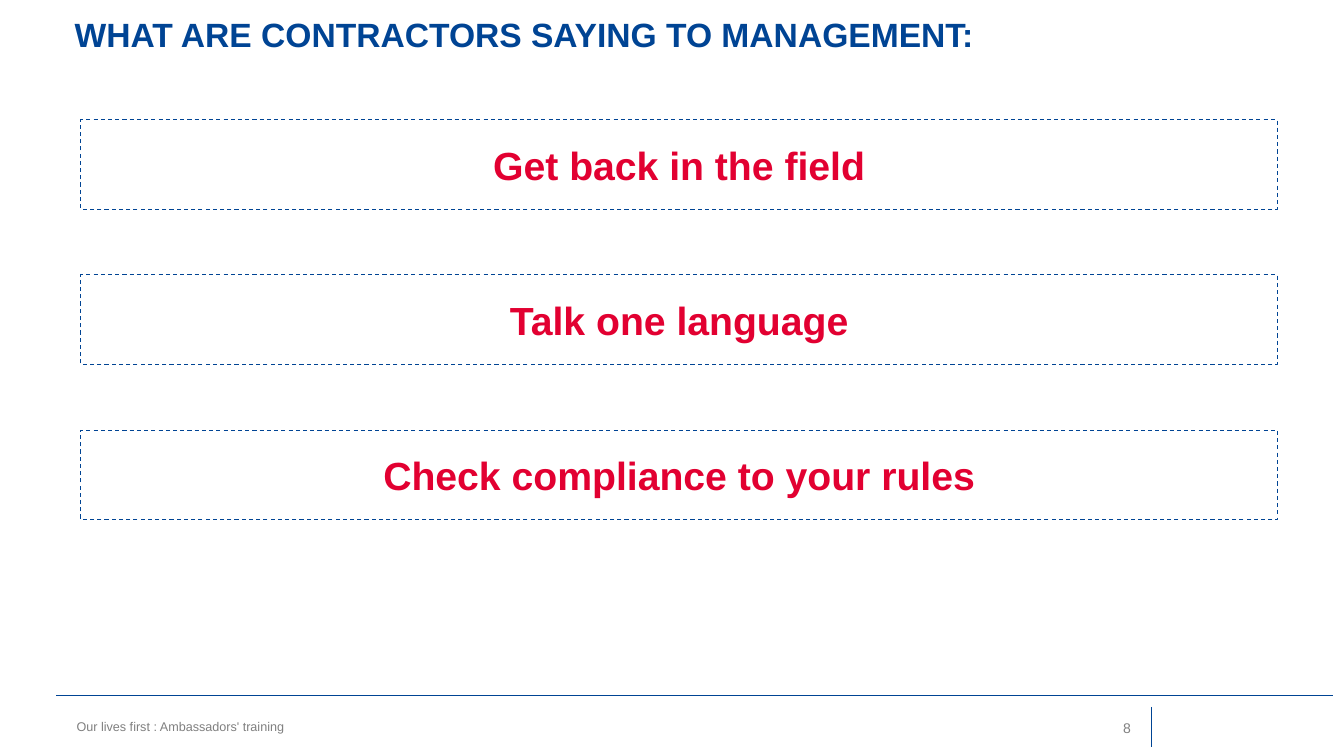
from pptx import Presentation
from pptx.dml.color import RGBColor
from pptx.enum.dml import MSO_LINE
from pptx.enum.shapes import MSO_CONNECTOR, MSO_SHAPE
from pptx.enum.text import MSO_ANCHOR, PP_ALIGN
from pptx.util import Cm, Pt
from lxml import etree

BLUE = RGBColor(0x00, 0x44, 0x94)
RED = RGBColor(0xE2, 0x00, 0x31)
GREY = RGBColor(0x80, 0x80, 0x80)
WHITE = RGBColor(0xFF, 0xFF, 0xFF)
DRAWING_NS = "http://schemas.openxmlformats.org/drawingml/2006/main"

TITLE = "WHAT ARE CONTRACTORS SAYING TO MANAGEMENT:"
MESSAGES = [
    "Get back in the field",
    "Talk one language",
    "Check compliance to your rules",
]
FOOTER = "Our lives first : Ambassadors' training"
PAGE_NUMBER = "8"
FOOTER_RULES = [
    (1.42, 17.53, 33.6, 17.53, 0.75),
    (29.01, 17.81, 29.01, 18.82, 0.5),
]

MESSAGE_LEFT, MESSAGE_TOP = 2.04, 3.02
MESSAGE_WIDTH, MESSAGE_HEIGHT = 30.15, 2.26
MESSAGE_PITCH = 3.91


def write(shape, text, size, color, bold=False, align=PP_ALIGN.LEFT):
    frame = shape.text_frame
    frame.word_wrap = True
    frame.vertical_anchor = MSO_ANCHOR.MIDDLE
    paragraph = frame.paragraphs[0]
    paragraph.text = text
    paragraph.alignment = align
    font = paragraph.font
    font.name, font.size, font.bold = "Arial", Pt(size), bold
    font.color.rgb = color


def add_text(slide, left, top, width, height, *style):
    box = slide.shapes.add_textbox(Cm(left), Cm(top), Cm(width), Cm(height))
    write(box, *style)
    return box


def add_rule(slide, x1, y1, x2, y2, weight):
    rule = slide.shapes.add_connector(
        MSO_CONNECTOR.STRAIGHT, Cm(x1), Cm(y1), Cm(x2), Cm(y2))
    rule.line.color.rgb = BLUE
    rule.line.width = Pt(weight)
    etree.SubElement(rule._element.spPr, f"{{{DRAWING_NS}}}effectLst")


def add_message(slide, top, text):
    message = slide.shapes.add_shape(
        MSO_SHAPE.RECTANGLE, Cm(MESSAGE_LEFT), Cm(top),
        Cm(MESSAGE_WIDTH), Cm(MESSAGE_HEIGHT))
    message.shadow.inherit = False
    message.fill.solid()
    message.fill.fore_color.rgb = WHITE
    message.line.color.rgb = BLUE
    message.line.width = Pt(0.75)
    message.line.dash_style = MSO_LINE.DASH
    write(message, text, 28, RED, True, PP_ALIGN.CENTER)


def main():
    deck = Presentation()
    deck.slide_width, deck.slide_height = Cm(33.87), Cm(19.05)
    slide = deck.slides.add_slide(deck.slide_layouts[6])

    for rule in FOOTER_RULES:
        add_rule(slide, *rule)
    add_text(slide, 26.06, 17.86, 2.69, 0.99,
             PAGE_NUMBER, 10, GREY, False, PP_ALIGN.RIGHT)
    add_text(slide, 1.68, 17.93, 9.45, 0.76, FOOTER, 9, GREY)

    title = add_text(slide, 1.88, 0, 31.67, 1.7, TITLE, 24, BLUE, True)
    title.text_frame.margin_left = 0

    for index, text in enumerate(MESSAGES):
        add_message(slide, MESSAGE_TOP + index * MESSAGE_PITCH, text)

    deck.save("out.pptx")


if __name__ == "__main__":
    main()
